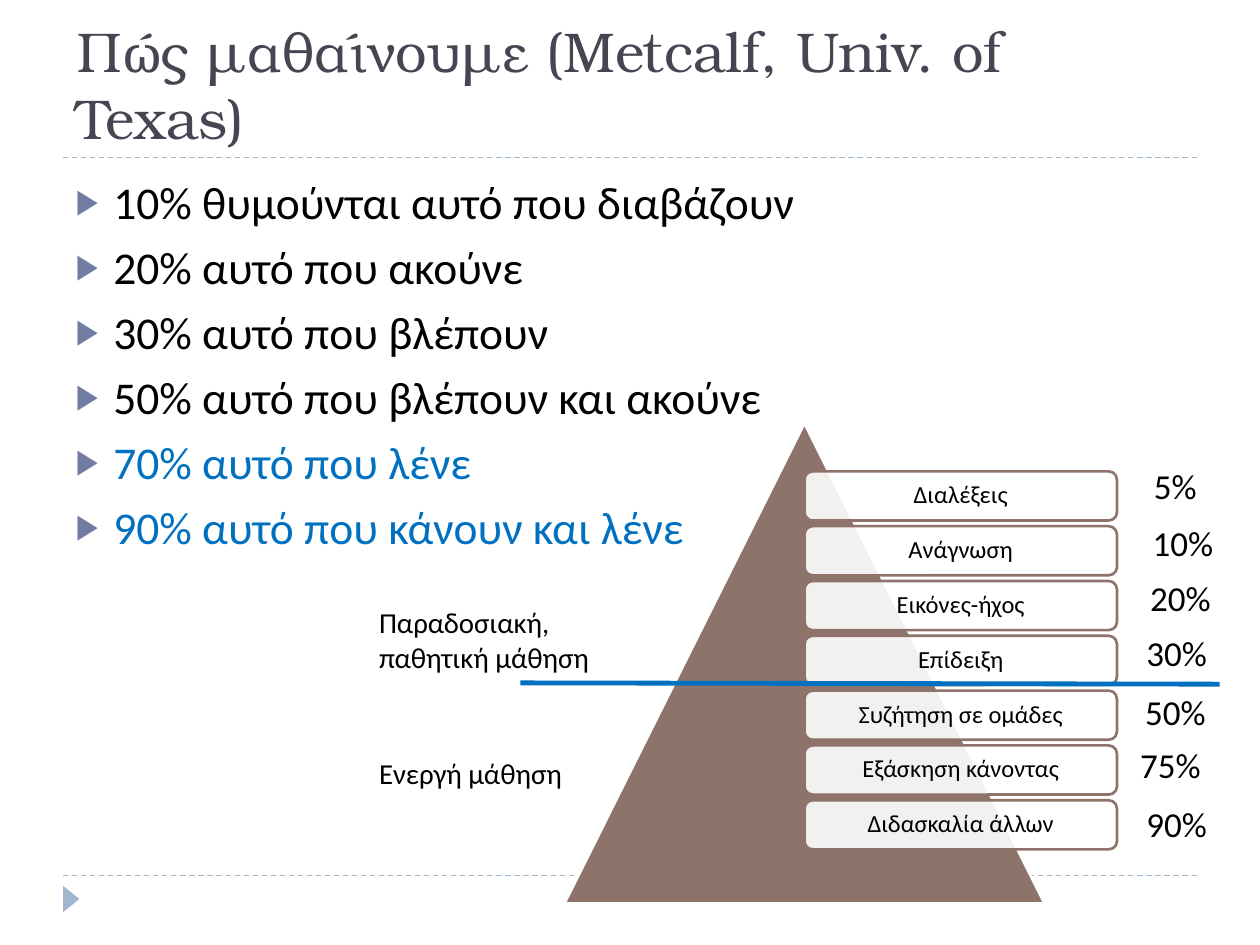
from lxml import etree
from pptx import Presentation
from pptx.dml.color import RGBColor
from pptx.enum.dml import MSO_LINE
from pptx.enum.shapes import MSO_CONNECTOR, MSO_SHAPE as Shape
from pptx.enum.text import MSO_ANCHOR as Anchor, MSO_AUTO_SIZE as Fit, PP_ALIGN as Align
from pptx.oxml.ns import qn
from pptx.util import Inches, Pt

BROWN, BLUE, PALE, BLACK = "8E736A", "0070C0", "9FB8CD", "000000"

FACTS = [
    ("10% θυμούνται αυτό που διαβάζουν", BLACK),
    ("20% αυτό που ακούνε", BLACK),
    ("30% αυτό που βλέπουν", BLACK),
    ("50% αυτό που βλέπουν και ακούνε", BLACK),
    ("70% αυτό που λένε", BLUE),
    ("90% αυτό που κάνουν και λένε", BLUE),
]
STEPS = ["Διαλέξεις", "Ανάγνωση", "Εικόνες-ήχος", "Επίδειξη",
         "Συζήτηση σε ομάδες", "Εξάσκηση κάνοντας", "Διδασκαλία άλλων"]
# Share remembered for each step: text, left, top
RATES = [("5%", 9.06, 3.64), ("10%", 9.05, 4.09), ("20%", 9.03, 4.53),
         ("30%", 9, 4.96), ("50%", 8.99, 5.43), ("75%", 8.95, 5.85),
         ("90%", 9, 6.32)]


def color(code):
    return RGBColor.from_string(code)


def style(para, size, code=BLACK, face="Calibri"):
    for run in para.runs:
        run.font.size = Pt(size)
        run.font.name = face
        run.font.color.rgb = color(code)


def place(shape, left, top, width, height):
    shape.left, shape.top = Inches(left), Inches(top)
    shape.width, shape.height = Inches(width), Inches(height)


def add_line(slide, x1, y1, x2, y2, code, width, dash=None):
    line = slide.shapes.add_connector(
        MSO_CONNECTOR.STRAIGHT, Inches(x1), Inches(y1), Inches(x2), Inches(y2))
    line.line.color.rgb = color(code)
    line.line.width = Pt(width)
    if dash:
        line.line.dash_style = dash
    etree.SubElement(line._element.spPr, qn("a:effectLst"))


def add_shape(slide, kind, box, fill, edge=None):
    shape = slide.shapes.add_shape(kind, *map(Inches, box))
    shape.shadow.inherit = False
    shape.fill.solid()
    shape.fill.fore_color.rgb = color(fill)
    if edge:
        shape.line.color.rgb = color(edge)
        shape.line.width = Pt(1.5)
    else:
        shape.line.fill.background()
    return shape


def add_label(slide, box, text, size, wrap):
    frame = slide.shapes.add_textbox(*map(Inches, box)).text_frame
    frame.word_wrap = wrap
    frame.text = text
    for para in frame.paragraphs:
        style(para, size)


def add_bullet(para):
    props = para._p.get_or_add_pPr()
    props.set("marL", str(Inches(0.3)))
    props.set("indent", str(-Inches(0.3)))
    tint = etree.SubElement(props, qn("a:buClr"))
    etree.SubElement(tint, qn("a:srgbClr"), val="727CA3")
    etree.SubElement(props, qn("a:buSzPct"), val="76000")
    etree.SubElement(props, qn("a:buChar"), char="▶")


def add_frame(slide):
    for y in (6.95, 1.25):
        add_line(slide, 0.5, y, 9.5, y, PALE, 0.75, MSO_LINE.DASH)
    mark = add_shape(slide, Shape.ISOSCELES_TRIANGLE, (0.46, 7.07, 0.21, 0.13), PALE)
    mark.rotation = 90


def fill_title(title, box):
    place(title, *box)
    frame = title.text_frame
    frame.text = "Πώς μαθαίνουμε (Metcalf, Univ. of Texas)"
    frame.auto_size = Fit.NONE
    frame.vertical_anchor = Anchor.BOTTOM
    frame.paragraphs[0].alignment = Align.LEFT
    style(frame.paragraphs[0], 32, "464653", "TeX Gyre Bonum")


def fill_facts(body, box):
    place(body, *box)
    frame = body.text_frame
    frame.text = "\n".join(text for text, _ in FACTS)
    frame.auto_size = Fit.NONE
    for para, (_, code) in zip(frame.paragraphs, FACTS):
        para.space_before = Pt(6)
        add_bullet(para)
        style(para, 26, code)


def add_pyramid(slide, left, top, side):
    add_shape(slide, Shape.ISOSCELES_TRIANGLE, (left, top, side, side), BROWN, "FFFFFF")
    # Steps start at the axis, one tenth of the way down
    pitch = 0.435
    for i, text in enumerate(STEPS):
        box = (left + side / 2, top + side / 10 + i * pitch, 2.48, 0.39)
        step = add_shape(slide, Shape.ROUNDED_RECTANGLE, box, "FFFFFF", BROWN)
        tint = step._element.spPr.find(qn("a:solidFill"))[0]
        etree.SubElement(tint, qn("a:alpha"), val="90000")
        frame = step.text_frame
        frame.margin_left = frame.margin_right = Inches(0.06)
        frame.margin_top = frame.margin_bottom = Inches(0.06)
        frame.vertical_anchor = Anchor.MIDDLE
        frame.text = text
        para = frame.paragraphs[0]
        para.alignment = Align.CENTER
        para.line_spacing = 0.9
        style(para, 14)


def add_notes(slide):
    # Divider between passive and active learning
    add_line(slide, 4.13, 5.42, 9.68, 5.43, BLUE, 2.75)
    add_label(slide, (2.91, 4.75, 1.89, 0.66), "Παραδοσιακή,\nπαθητική μάθηση", 16.5, False)
    add_label(slide, (2.91, 5.95, 1.72, 0.38), "Ενεργή μάθηση", 16.5, False)
    for text, left, top in RATES:
        add_label(slide, (left, top, 0.68, 0.44), text, 20, True)


def main():
    deck = Presentation()
    deck.slide_width, deck.slide_height = Inches(10), Inches(7.5)
    slide = deck.slides.add_slide(deck.slide_layouts[1])
    fill_title(slide.shapes.title, (0.5, 0.17, 9, 1.08))
    fill_facts(slide.placeholders[1], (0.5, 1.33, 9, 5.4))
    add_frame(slide)
    add_pyramid(slide, 4.48, 3.36, 3.81)
    add_notes(slide)
    deck.save("out.pptx")


if __name__ == "__main__":
    main()
